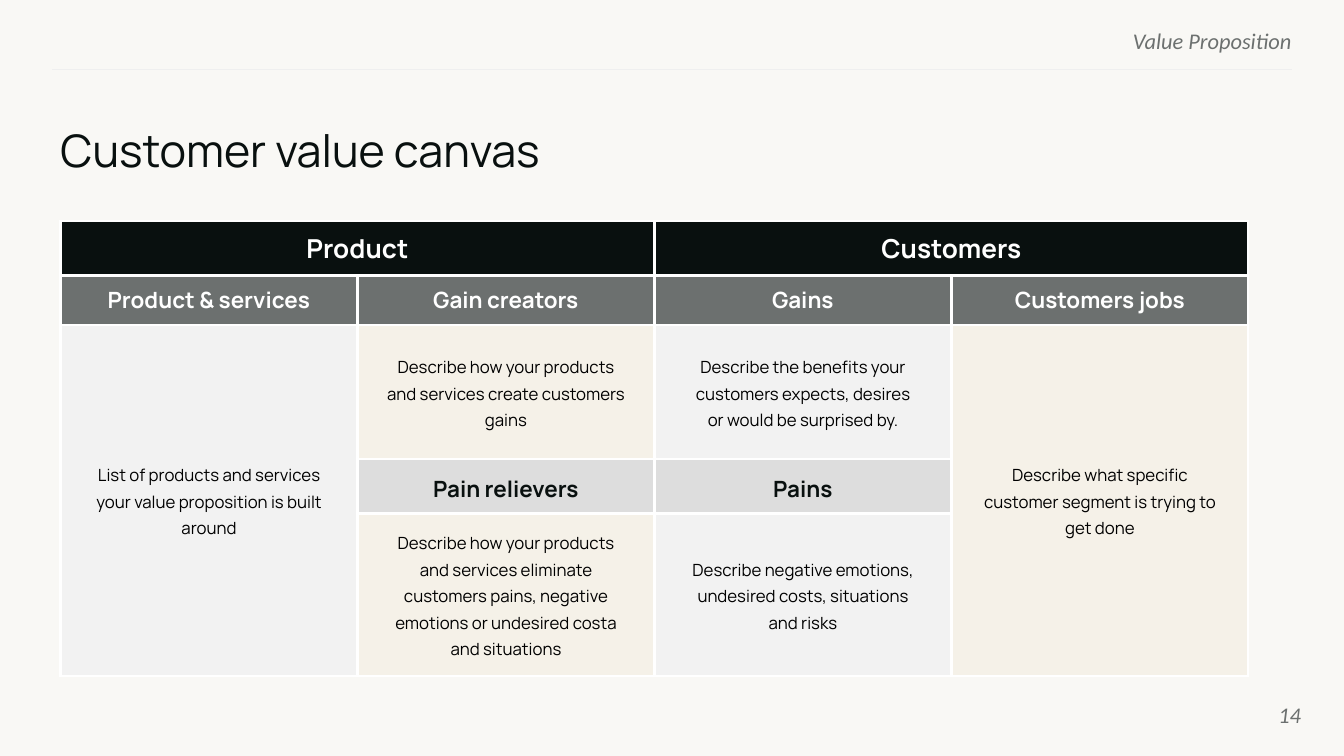
from lxml.etree import SubElement
from pptx import Presentation
from pptx.dml.color import RGBColor
from pptx.enum.shapes import MSO_CONNECTOR as Connector
from pptx.enum.text import MSO_ANCHOR as Anchor, MSO_AUTO_SIZE as AutoSize, PP_ALIGN as Align
from pptx.oxml.ns import qn
from pptx.util import Pt

INK, GREY, WHITE, BLACK = "09100F", "6C706F", "FFFFFF", "000000"
SILVER, PALE, CREAM = "DDDDDD", "F2F2F2", "F5F1E8"

# Cell styles: text size, text colour, bold, side margin, top margin, line spacing
GROUP = (14, WHITE, True, 9.36, 5.04, 1)
HEADING = (12, WHITE, True, 9.36, 5.04, 1)
SUBHEADING = (12, INK, True, 9.36, 5.04, 1.15)
BODY = (9, BLACK, False, 14.4, 0, 1.15)

COLUMN_WIDTH = 159.1
ROW_HEIGHTS = (24, 24, 72, 24, 87)

# Row, column, rows spanned, columns spanned, fill, style, text
CANVAS = [
    (0, 0, 1, 2, INK, GROUP, "Product"),
    (0, 2, 1, 2, INK, GROUP, "Customers"),
    (1, 0, 1, 1, GREY, HEADING, "Product & services"),
    (1, 1, 1, 1, GREY, HEADING, "Gain creators"),
    (1, 2, 1, 1, GREY, HEADING, "Gains"),
    (1, 3, 1, 1, GREY, HEADING, "Customers jobs"),
    (2, 0, 3, 1, PALE, BODY,
     "List of products and services your value proposition is built around"),
    (2, 1, 1, 1, CREAM, BODY,
     "Describe how your products and services create customers gains"),
    (2, 2, 1, 1, PALE, BODY,
     "Describe the benefits your\ncustomers expects, desires\nor would be surprised by."),
    (2, 3, 3, 1, CREAM, BODY,
     "Describe what specific customer segment is trying to get done"),
    (3, 1, 1, 1, SILVER, SUBHEADING, "Pain relievers"),
    (3, 2, 1, 1, SILVER, SUBHEADING, "Pains"),
    (4, 1, 1, 1, CREAM, BODY,
     "Describe how your products and services eliminate customers pains, "
     "negative emotions or undesired costa and situations"),
    (4, 2, 1, 1, PALE, BODY,
     "Describe negative emotions, undesired costs, situations and risks"),
]


def color(hex_code):
    return RGBColor.from_string(hex_code)


def write(frame, text, font, size, hex_code, align, bold=False, italic=False):
    paragraph = frame.paragraphs[0]
    paragraph.text = text
    paragraph.alignment = align
    for run in paragraph.runs:
        run.font.name = font
        run.font.size = Pt(size)
        run.font.bold = bold
        run.font.italic = italic
        run.font.color.rgb = color(hex_code)
    return paragraph


def prepare_frame(frame, anchor):
    frame.margin_left = frame.margin_right = frame.margin_top = frame.margin_bottom = 0
    frame.word_wrap = True
    frame.auto_size = AutoSize.NONE
    frame.vertical_anchor = anchor


def add_title(slide, text):
    title = slide.shapes.title
    title.left, title.top, title.width, title.height = Pt(32.4), Pt(65.5), Pt(664.6), Pt(36.7)
    prepare_frame(title.text_frame, Anchor.TOP)
    paragraph = write(title.text_frame, text, "Manrope", 24, INK, Align.LEFT)
    paragraph.space_after = Pt(10)


def add_label(slide, text, left, top, width, height, anchor):
    label = slide.shapes.add_textbox(Pt(left), Pt(top), Pt(width), Pt(height))
    prepare_frame(label.text_frame, anchor)
    write(label.text_frame, text, "Calibri", 12, GREY, Align.RIGHT, italic=True)


def add_rule(slide, left, right, y):
    rule = slide.shapes.add_connector(Connector.STRAIGHT, Pt(left), Pt(y), Pt(right), Pt(y))
    rule.line.color.rgb = color("EFEFEF")
    rule.line.width = Pt(0.75)
    SubElement(rule._element.spPr, qn("a:effectLst"))


def add_borders(cell):
    properties = cell._tc.get_or_add_tcPr()
    for side in ("a:lnL", "a:lnR", "a:lnT", "a:lnB"):
        border = SubElement(properties, qn(side), w=str(Pt(1.5)))
        fill = SubElement(border, qn("a:solidFill"))
        SubElement(fill, qn("a:srgbClr"), val=WHITE)


def fill_cell(cell, text, style):
    size, text_color, bold, side_margin, top_margin, spacing = style
    cell.margin_left = cell.margin_right = Pt(side_margin)
    cell.margin_top = cell.margin_bottom = Pt(top_margin)
    cell.vertical_anchor = Anchor.MIDDLE
    paragraph = write(cell.text_frame, text, "Manrope", size, text_color, Align.CENTER, bold)
    paragraph.line_spacing = spacing


def add_canvas(slide):
    frame = slide.shapes.add_table(len(ROW_HEIGHTS), 4, Pt(32.4), Pt(118.3),
                                   Pt(4 * COLUMN_WIDTH), Pt(sum(ROW_HEIGHTS)))
    canvas = frame.table
    for column in canvas.columns:
        column.width = Pt(COLUMN_WIDTH)
    for row, height in zip(canvas.rows, ROW_HEIGHTS):
        row.height = Pt(height)
    for row, column, row_span, column_span, fill, style, text in CANVAS:
        first = canvas.cell(row, column)
        if row_span * column_span > 1:
            first.merge(canvas.cell(row + row_span - 1, column + column_span - 1))
        # Covered cells share the border and fill of the cell that spans them
        for r in range(row, row + row_span):
            for c in range(column, column + column_span):
                part = canvas.cell(r, c)
                add_borders(part)
                part.fill.solid()
                part.fill.fore_color.rgb = color(fill)
        fill_cell(first, text, style)


def main():
    deck = Presentation()
    deck.slide_width, deck.slide_height = Pt(720), Pt(405)
    slide = deck.slides.add_slide(deck.slide_layouts[5])
    slide.background.fill.solid()
    slide.background.fill.fore_color.rgb = color("F9F8F5")

    # Running header
    add_label(slide, "Value Proposition", 414.7, 14.4, 277.2, 13, Anchor.TOP)
    add_rule(slide, 28.1, 691.9, 37.4)

    # Title and canvas
    add_title(slide, "Customer value canvas")
    add_canvas(slide)

    # Page number
    add_label(slide, "14", 653.8, 367.2, 43.2, 31, Anchor.MIDDLE)

    deck.save("out.pptx")


if __name__ == "__main__":
    main()
